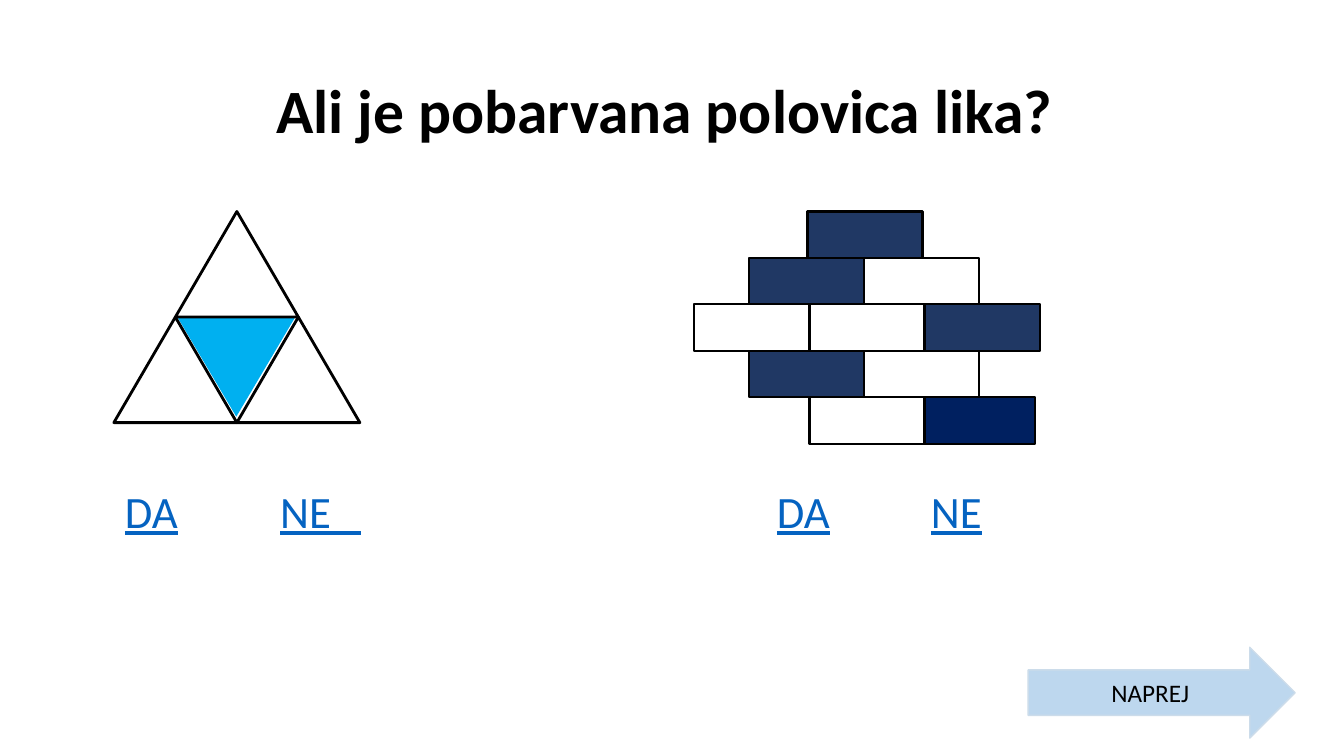
from lxml import etree
from pptx import Presentation
from pptx import util as u
from pptx.dml import color
from pptx.enum import shapes, text
from pptx.oxml import ns

COLORS = {
    "black": "000000",
    "white": "FFFFFF",
    "sky": "00B0F0",
    "slate": "203864",
    "navy": "002060",
    "answer": "0563C1",
    "arrow": "BDD7EE",
    "arrow_edge": "CCDCEA",
}
FONT = "Calibri"
TRIANGLE_W, TRIANGLE_H = 3.1, 2.66
BRICK_W, BRICK_H = 2.9, 1.17
TOP = 5.33
BRICK_ROWS = [
    (20.35, BRICK_W, ["slate"]),
    (18.87, BRICK_W, ["slate", "white"]),
    (17.5, BRICK_W, ["white", "white", "slate"]),
    (18.87, BRICK_W, ["slate", "white"]),
    (20.4, 2.79, ["white", "navy"]),
]
ANSWER_TABS = [3.91, 16.43, 20.31]


def rgb(name):
    return color.RGBColor.from_string(COLORS[name])


def add_figure(s, kind, x, y, w, h, fill=None, line=None, weight=1):
    sp = s.shapes.add_shape(kind, u.Cm(x), u.Cm(y), u.Cm(w), u.Cm(h))
    sp.shadow.inherit = False
    if fill:
        sp.fill.solid()
        sp.fill.fore_color.rgb = rgb(fill)
    else:
        sp.fill.background()
    if line:
        sp.line.color.rgb = rgb(line)
        sp.line.width = u.Pt(weight)
    else:
        sp.line.fill.background()
    return sp


def add_run(p, words, size, fill="black", bold=False, underline=False):
    r = p.add_run()
    r.text = words
    r.font.name = FONT
    r.font.size = u.Pt(size)
    r.font.bold = bold
    r.font.underline = underline
    r.font.color.rgb = rgb(fill)


def add_text_box(s, x, y, w, h):
    tf = s.shapes.add_textbox(u.Cm(x), u.Cm(y), u.Cm(w), u.Cm(h)).text_frame
    tf.word_wrap = True
    tf.margin_left = tf.margin_right = tf.margin_top = tf.margin_bottom = 0
    return tf


def add_title(s, words):
    tf = add_text_box(s, 2.15, 1.01, 29.21, 3.68)
    tf.vertical_anchor = text.MSO_ANCHOR.MIDDLE
    p = tf.paragraphs[0]
    p.alignment = text.PP_ALIGN.CENTER
    p.line_spacing = 0.9
    add_run(p, words, 44, bold=True)


def add_triangle(s):
    kind = shapes.MSO_SHAPE.FLOWCHART_EXTRACT
    left, middle = 2.87, TOP + TRIANGLE_H
    half = add_figure(s, kind, 4.47, middle, 2.97, 2.51, "sky")
    half.rotation = 180
    for x, y in [(left + TRIANGLE_W / 2, TOP), (left + TRIANGLE_W, middle), (left, middle)]:
        add_figure(s, kind, x, y, TRIANGLE_W, TRIANGLE_H, line="black", weight=2)


def add_bricks(s):
    for row, (left, step, fills) in enumerate(BRICK_ROWS):
        for col, fill in reversed(list(enumerate(fills))):
            add_figure(s, shapes.MSO_SHAPE.RECTANGLE, left + col * step, TOP + row * BRICK_H,
                       BRICK_W, BRICK_H, fill, "black", 1.5)


def add_answers(s, answers):
    p = add_text_box(s, 3.15, 12.19, 27, 1.4).paragraphs[0]
    tabs = etree.SubElement(p._p.get_or_add_pPr(), ns.qn("a:tabLst"))
    for pos in ANSWER_TABS:
        etree.SubElement(tabs, ns.qn("a:tab"), pos=str(u.Cm(pos)), algn="l")
    for i, answer in enumerate(answers):
        if i:
            add_run(p, "\t", 32)
        add_run(p, answer, 32, "answer", underline=True)


def add_next_arrow(s, words):
    sp = add_figure(s, shapes.MSO_SHAPE.RIGHT_ARROW, 25.91, 16.31, 6.73, 2.29,
                    "arrow", "arrow_edge")
    tf = sp.text_frame
    tf.vertical_anchor = text.MSO_ANCHOR.MIDDLE
    p = tf.paragraphs[0]
    p.alignment = text.PP_ALIGN.CENTER
    add_run(p, words, 18)


def main():
    prs = Presentation()
    prs.slide_width, prs.slide_height = u.Cm(33.87), u.Cm(19.05)
    s = prs.slides.add_slide(prs.slide_layouts[6])
    add_answers(s, ["DA", "NE   ", "DA", "NE"])
    add_triangle(s)
    add_bricks(s)
    add_title(s, "Ali je pobarvana polovica lika?")
    add_next_arrow(s, "NAPREJ")
    prs.save("out.pptx")


if __name__ == "__main__":
    main()
